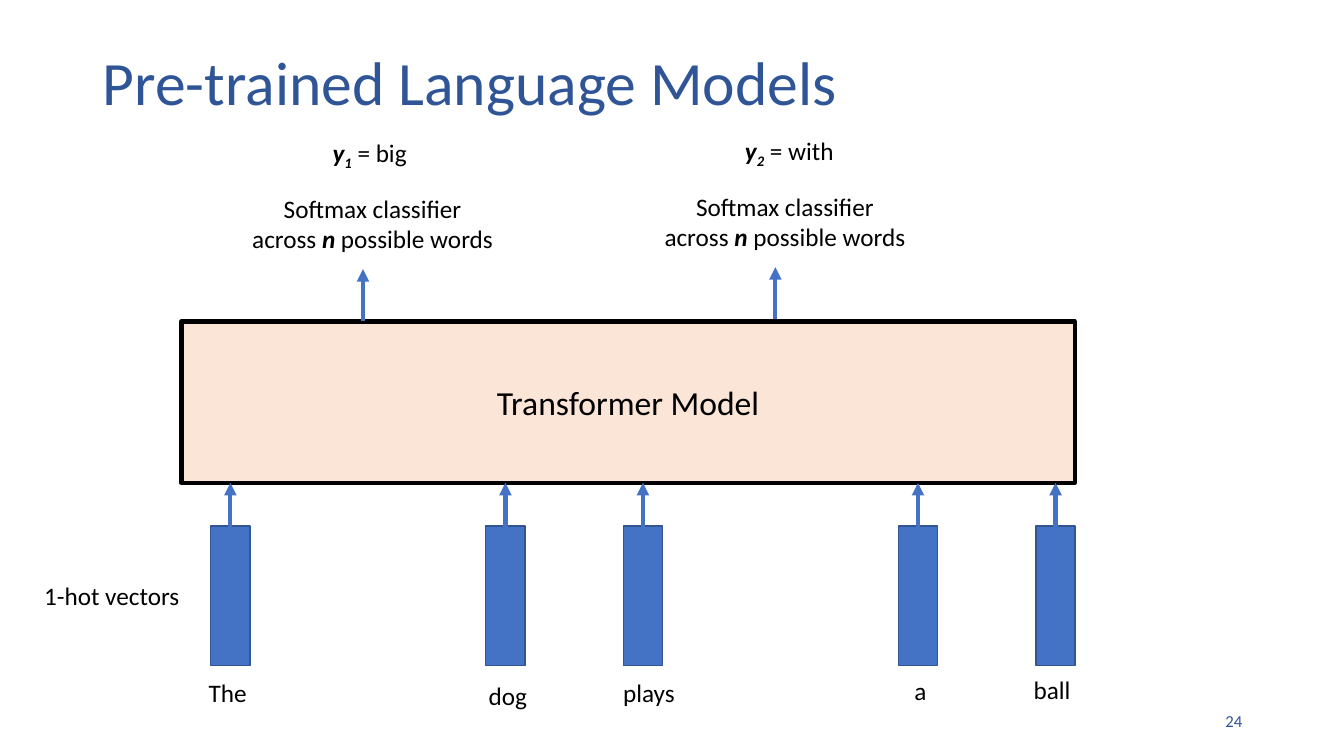
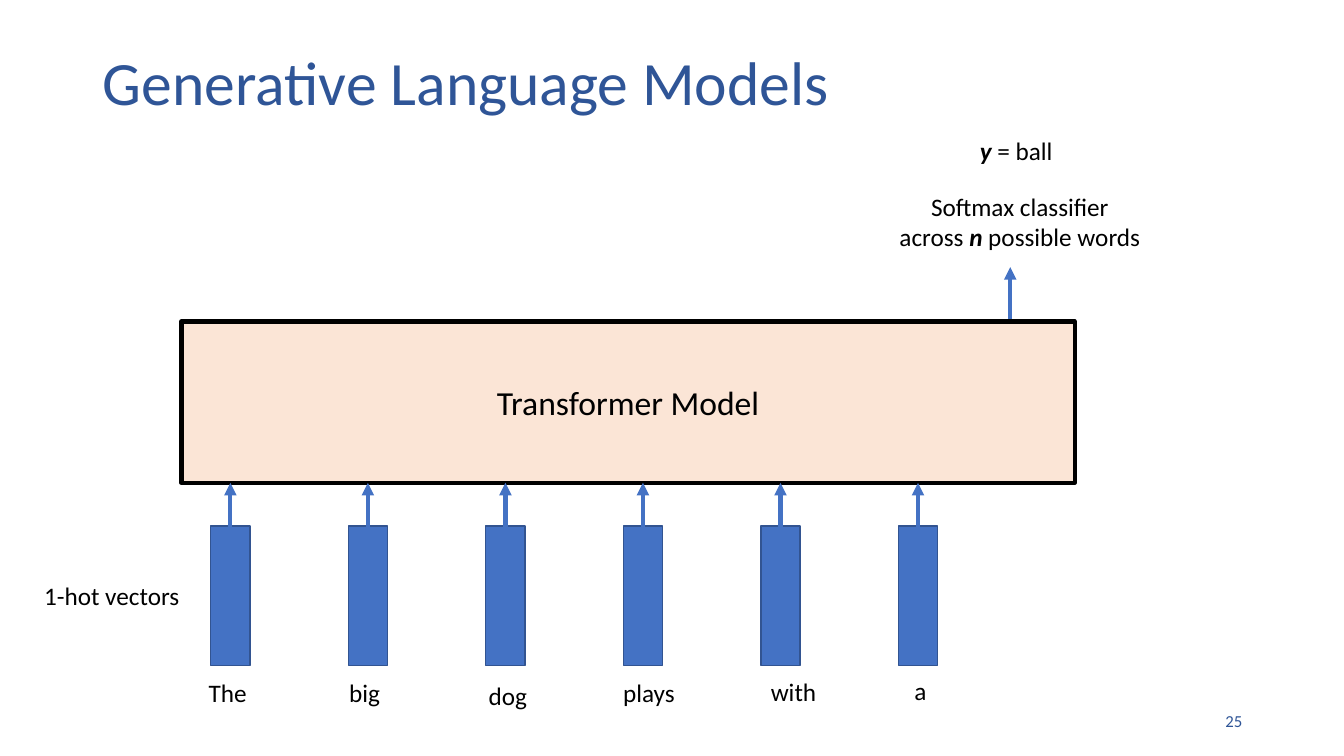
from dataclasses import dataclass
from typing import NamedTuple

from lxml.etree import SubElement
from pptx import Presentation
from pptx.dml.color import RGBColor as Color
from pptx.enum.shapes import MSO_CONNECTOR as Connector, MSO_SHAPE as Preset
from pptx.enum.text import MSO_ANCHOR as Anchor, MSO_AUTO_SIZE as Fit, PP_ALIGN as Align
from pptx.oxml.ns import qn
from pptx.util import Inches, Pt


@dataclass(frozen=True)
class Theme:
    font: str = "Calibri"
    heading: str = "2F5597"
    ink: str = "000000"
    blue: str = "4472C4"
    blue_edge: str = "325491"
    peach: str = "FBE5D6"
    title_size: int = 44
    model_size: int = 24
    body_size: int = 18
    number_size: int = 12
    thick: int = 3
    thin: int = 1


class Box(NamedTuple):
    left: float
    top: float
    width: float
    height: float

    def emu(self) -> list:
        return [Inches(value) for value in self]


class Span(NamedTuple):
    text: str
    strong: bool = False
    subscript: bool = False


class Word(NamedTuple):
    """An input word; shift is the label's offset from its vector."""
    text: str
    column: int
    shift: float
    top: float
    width: float


class Prediction(NamedTuple):
    center: float
    answer: list
    answer_width: float
    drop: float = 0


class Page(NamedTuple):
    title: str
    number: int
    words: list
    predictions: list


THEME = Theme()
SLIDE_WIDTH, SLIDE_HEIGHT = 13.33, 7.5

# Grid of input columns
FIRST_COLUMN, COLUMN_STEP = 2.09, 1.364
VECTOR_TOP, VECTOR_WIDTH, VECTOR_HEIGHT = 5.22, 0.39, 1.38
LINE_HEIGHT = 0.4

TITLE = Box(0.92, 0.4, 11.5, 0.9)
MODEL = Box(1.8, 3.19, 8.86, 1.6)
NUMBER = Box(9.42, 6.95, 3, LINE_HEIGHT)
VECTOR_NOTE = Box(0.34, 5.71, 1.56, LINE_HEIGHT)

CLASSIFIER = [
    [Span("Softmax classifier")],
    [Span("across "), Span("n", strong=True), Span(" possible words")],
]

THE = Word("The", 0, -0.12, 6.67, 0.64)
BIG = Word("big", 1, -0.09, 6.67, 0.57)
DOG = Word("dog", 2, -0.07, 6.7, 0.65)
PLAYS = Word("plays", 3, -0.1, 6.67, 0.78)
WITH = Word("with", 4, 0, 6.66, 0.72)
A = Word("a", 5, 0.06, 6.65, 0.38)
BALL = Word("ball", 6, -0.12, 6.64, 0.63)


def answer(word: str, index: str = "") -> list:
    spans = [Span("y", strong=True)]
    if index:
        spans.append(Span(index, strong=True, subscript=True))
    return spans + [Span(f" = {word}")]


PAGES = [
    Page("Pre-trained Language Models", 24, [THE, DOG, PLAYS, A, BALL],
         [Prediction(3.6, answer("big", "1"), 1.02, 0.02),
          Prediction(7.69, answer("with", "2"), 1.16)]),
    Page("Generative Language Models", 25, [THE, BIG, DOG, PLAYS, WITH, A],
         [Prediction(10.02, answer("ball"), 0.99)]),
]


def assign(target, values: dict) -> None:
    for name, value in values.items():
        setattr(target, name, value)


def write(frame, lines: list, size: int, color: str = THEME.ink,
          align=Align.LEFT, spacing: float = 1.0) -> None:
    """Fill a text frame with lines, each a list of spans."""
    for index, spans in enumerate(lines):
        para = frame.add_paragraph() if index else frame.paragraphs[0]
        assign(para, {"alignment": align, "line_spacing": spacing})
        for span in spans:
            run = para.add_run()
            run.text = span.text
            assign(run.font, {"name": THEME.font, "size": Pt(size),
                              "bold": span.strong, "italic": span.strong})
            run.font.color.rgb = Color.from_string(color)
            if span.subscript:
                run.font._element.set("baseline", "-25000")


def add_label(slide, box: Box, lines: list, align=Align.LEFT) -> None:
    frame = slide.shapes.add_textbox(*box.emu()).text_frame
    assign(frame, {"word_wrap": False, "auto_size": Fit.SHAPE_TO_FIT_TEXT})
    write(frame, lines, THEME.body_size, align=align)


def add_block(slide, box: Box, fill: str, edge: str, weight: int):
    block = slide.shapes.add_shape(Preset.RECTANGLE, *box.emu())
    block.shadow.inherit = False
    block.fill.solid()
    block.fill.fore_color.rgb = Color.from_string(fill)
    block.line.color.rgb = Color.from_string(edge)
    block.line.width = Pt(weight)
    return block


def add_up_arrow(slide, center: float, bottom: float, top: float) -> None:
    ends = [Inches(value) for value in (center, bottom, center, top)]
    arrow = slide.shapes.add_connector(Connector.STRAIGHT, *ends)
    arrow.line.color.rgb = Color.from_string(THEME.blue)
    arrow.line.width = Pt(THEME.thick)
    SubElement(arrow.line._get_or_add_ln(), qn("a:tailEnd"), type="triangle")
    SubElement(arrow._element.spPr, qn("a:effectLst"))


def add_frame(slide, page: Page) -> None:
    """Title and page number."""
    title = slide.shapes.title
    assign(title, dict(zip(("left", "top", "width", "height"), TITLE.emu())))
    assign(title.text_frame, {"vertical_anchor": Anchor.MIDDLE,
                              "auto_size": Fit.NONE, "word_wrap": True})
    write(title.text_frame, [[Span(page.title)]], THEME.title_size,
          THEME.heading, spacing=0.9)
    number = slide.shapes.add_textbox(*NUMBER.emu()).text_frame
    assign(number, {"vertical_anchor": Anchor.MIDDLE, "word_wrap": True})
    write(number, [[Span(str(page.number))]], THEME.number_size,
          THEME.heading, Align.RIGHT)


def add_model(slide) -> None:
    model = add_block(slide, MODEL, THEME.peach, THEME.ink, THEME.thick)
    model.text_frame.vertical_anchor = Anchor.MIDDLE
    write(model.text_frame, [[Span("Transformer Model")]],
          THEME.model_size, align=Align.CENTER)


def add_word(slide, word: Word) -> None:
    """Vector, its arrow into the model, and the word below."""
    left = FIRST_COLUMN + word.column * COLUMN_STEP
    add_block(slide, Box(left, VECTOR_TOP, VECTOR_WIDTH, VECTOR_HEIGHT),
              THEME.blue, THEME.blue_edge, THEME.thin)
    add_up_arrow(slide, left + VECTOR_WIDTH / 2, VECTOR_TOP + 0.09,
                 MODEL.top + MODEL.height)
    add_label(slide, Box(left + word.shift, word.top, word.width, LINE_HEIGHT),
              [[Span(word.text)]])


def add_prediction(slide, item: Prediction) -> None:
    """Arrow out of the model, classifier and predicted word."""
    add_up_arrow(slide, item.center, 3.16 + item.drop, 2.65 + item.drop)
    add_label(slide, Box(item.center - 1.21, 1.85 + item.drop, 2.61, 0.71),
              CLASSIFIER, Align.CENTER)
    add_label(slide, Box(item.center - 0.4, 1.29 + item.drop,
                         item.answer_width, LINE_HEIGHT), [item.answer])


def add_page(deck, page: Page) -> None:
    slide = deck.slides.add_slide(deck.slide_layouts.get_by_name("Title Only"))
    add_frame(slide, page)
    add_model(slide)
    for word in page.words:
        add_word(slide, word)
    add_label(slide, VECTOR_NOTE, [[Span("1-hot vectors")]])
    for item in page.predictions:
        add_prediction(slide, item)


def main() -> None:
    deck = Presentation()
    assign(deck, {"slide_width": Inches(SLIDE_WIDTH),
                  "slide_height": Inches(SLIDE_HEIGHT)})
    for page in PAGES:
        add_page(deck, page)
    deck.save("out.pptx")


if __name__ == "__main__":
    main()
